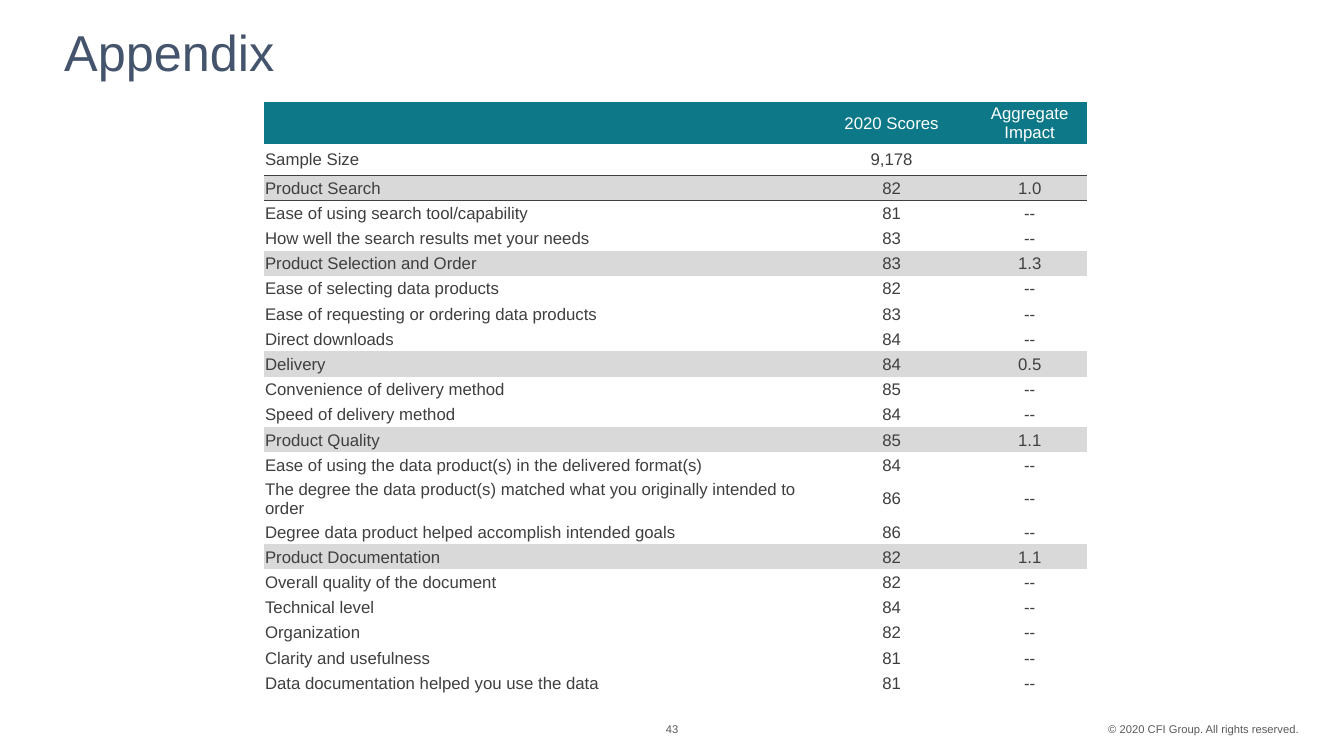
from lxml import etree
from pptx import Presentation
from pptx.dml.color import RGBColor
from pptx.enum import text
from pptx.oxml import ns
from pptx.util import Cm, Pt

TEAL, GREY, DARK, WHITE = "0D7988", "D9D9D9", "3F3F3F", "FFFFFF"
SLATE, FOOTER_GREY = "45546D", "595959"
NO_STYLE = "{2D5ABB26-0587-4C30-8999-92F81FD0307C}"
LEFT, CENTER, RIGHT = text.PP_ALIGN.LEFT, text.PP_ALIGN.CENTER, text.PP_ALIGN.RIGHT

HEADER = ("", "2020 Scores", "Aggregate Impact")
SAMPLE = ("Sample Size", "9,178", "")
# Topic, score, impact, then the questions of the topic with their scores
TOPICS = [
    ("Product Search", 82, "1.0", [
        ("Ease of using search tool/capability", 81),
        ("How well the search results met your needs", 83)]),
    ("Product Selection and Order", 83, "1.3", [
        ("Ease of selecting data products", 82),
        ("Ease of requesting or ordering data products", 83),
        ("Direct downloads", 84)]),
    ("Delivery", 84, "0.5", [
        ("Convenience of delivery method", 85),
        ("Speed of delivery method", 84)]),
    ("Product Quality", 85, "1.1", [
        ("Ease of using the data product(s) in the delivered format(s)", 84),
        ("The degree the data product(s) matched what you originally intended to order", 86),
        ("Degree data product helped accomplish intended goals", 86)]),
    ("Product Documentation", 82, "1.1", [
        ("Overall quality of the document", 82),
        ("Technical level", 84),
        ("Organization", 82),
        ("Clarity and usefulness", 81),
        ("Data documentation helped you use the data", 81)]),
]
COLUMN_WIDTHS = (Cm(13.79), Cm(4.06), Cm(2.9))
TALL_ROW = Cm(0.74)
ROW = Cm(12.7) // 20

# Wording, left, top, width, height, size, colour, alignment, anchor
TEXTS = [
    ("Appendix", 1.37, 0, 31.32, 2.57, 36, SLATE, LEFT, text.MSO_ANCHOR.MIDDLE),
    ("43", 15.95, 18.08, 1.98, 0.6, 8, FOOTER_GREY, CENTER, text.MSO_ANCHOR.TOP),
    ("© 2020 CFI Group. All rights reserved.", 25.27, 18.08, 7.72, 0.6, 8,
     FOOTER_GREY, RIGHT, text.MSO_ANCHOR.TOP),
]


def color(value):
    return RGBColor.from_string(value)


def format_paragraph(paragraph, size, font_color, alignment):
    paragraph.alignment = alignment
    for run in paragraph.runs:
        run.font.name = "Arial"
        run.font.size = Pt(size)
        run.font.color.rgb = color(font_color)


def add_text(slide, wording, left, top, width, height, size, font_color, alignment, anchor):
    box = slide.shapes.add_textbox(Cm(left), Cm(top), Cm(width), Cm(height))
    frame = box.text_frame
    frame.word_wrap = True
    frame.vertical_anchor = anchor
    frame.text = wording
    format_paragraph(frame.paragraphs[0], size, font_color, alignment)


def add_border(cell, side):
    """Draw a thin dark line on one side of the cell, named lnT or lnB."""
    line = etree.Element(ns.qn(f"a:{side}"), w=str(Pt(0.5)))
    fill = etree.SubElement(line, ns.qn("a:solidFill"))
    etree.SubElement(fill, ns.qn("a:srgbClr"), val=DARK)
    cell._tc.get_or_add_tcPr().insert(0, line)


def fill_cell(cell, wording, column, fill, font_color):
    cell.margin_left = cell.margin_right = cell.margin_top = Cm(0.03)
    cell.margin_bottom = 0
    cell.vertical_anchor = text.MSO_ANCHOR.MIDDLE
    if fill:
        cell.fill.solid()
        cell.fill.fore_color.rgb = color(fill)
    else:
        cell.fill.background()
    if wording:
        cell.text_frame.text = wording
        format_paragraph(cell.text_frame.paragraphs[0], 12, font_color,
                         CENTER if column else LEFT)


def add_scores(slide):
    rows = [(HEADER, TEAL, WHITE), (SAMPLE, None, DARK)]
    for topic, score, impact, questions in TOPICS:
        rows.append(((topic, str(score), impact), GREY, DARK))
        rows += [((question, str(value), "--"), None, DARK) for question, value in questions]

    heights = [TALL_ROW] * 2 + [ROW] * (len(rows) - 2)
    table = slide.shapes.add_table(len(rows), len(COLUMN_WIDTHS), Cm(6.65), Cm(2.57),
                                   sum(COLUMN_WIDTHS), sum(heights)).table
    table.first_row = table.horz_banding = False
    table._tbl.tblPr.find(ns.qn("a:tableStyleId")).text = NO_STYLE
    for column, width in zip(table.columns, COLUMN_WIDTHS):
        column.width = width
    for index, (wordings, fill, font_color) in enumerate(rows):
        table.rows[index].height = heights[index]
        for column, wording in enumerate(wordings):
            fill_cell(table.cell(index, column), wording, column, fill, font_color)
    for column in range(len(COLUMN_WIDTHS)):
        add_border(table.cell(1, column), "lnB")
        add_border(table.cell(2, column), "lnT")


def main():
    presentation = Presentation()
    presentation.slide_width, presentation.slide_height = Cm(33.87), Cm(19.05)
    slide = presentation.slides.add_slide(presentation.slide_layouts[6])
    for item in TEXTS:
        add_text(slide, *item)
    add_scores(slide)
    presentation.save("out.pptx")


if __name__ == "__main__":
    main()
